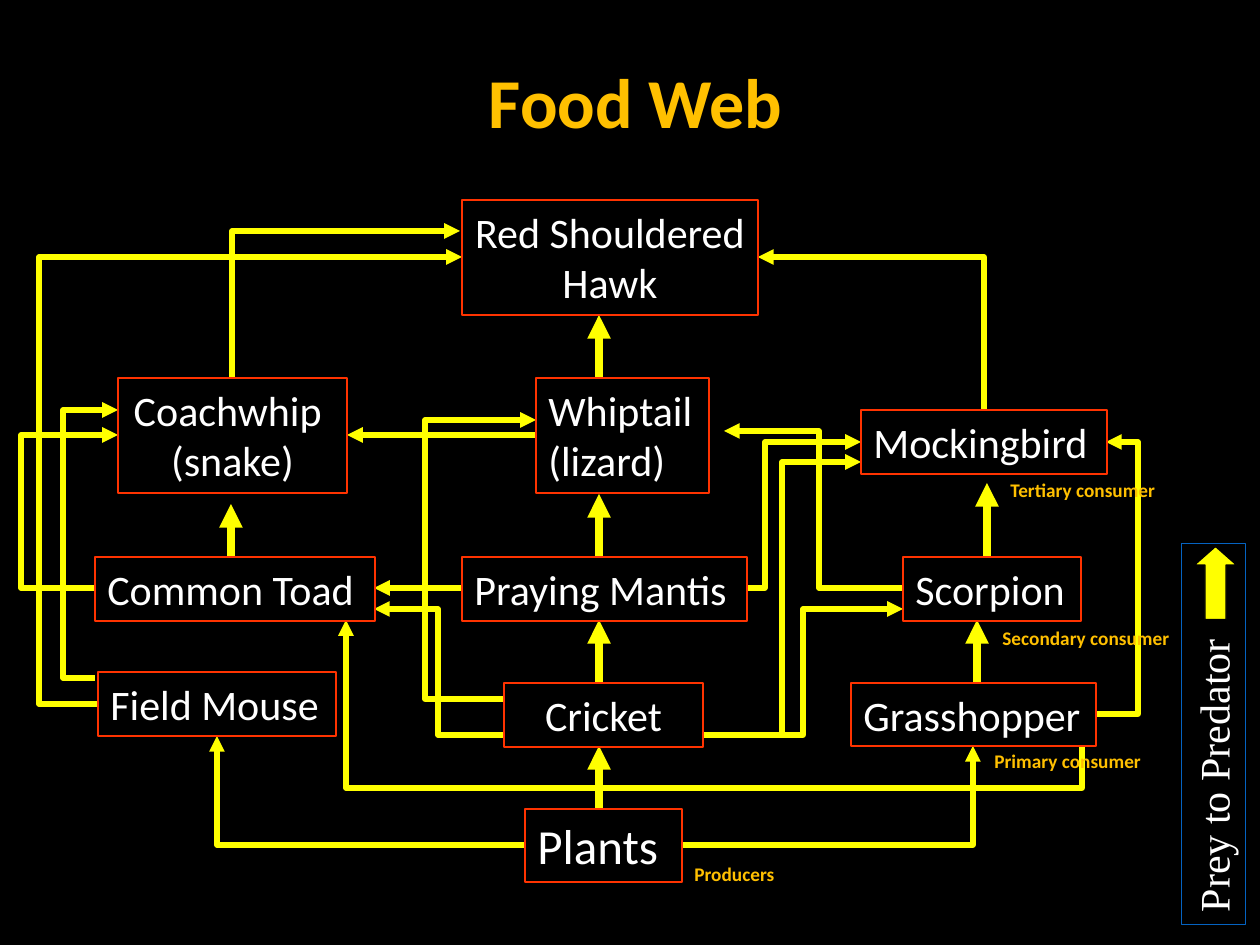
from lxml import etree
from pptx import Presentation
from pptx.dml.color import RGBColor
from pptx.enum.shapes import MSO_CONNECTOR, MSO_SHAPE
from pptx.enum.text import MSO_ANCHOR, MSO_AUTO_SIZE, PP_ALIGN
from pptx.oxml.ns import qn
from pptx.util import Emu, Pt

EMU_PER_PX = 914400 / 126

BLACK = RGBColor(0x00, 0x00, 0x00)
WHITE = RGBColor(0xFF, 0xFF, 0xFF)
YELLOW = RGBColor(0xFF, 0xFF, 0x00)
GOLD = RGBColor(0xFF, 0xC0, 0x00)
RED = RGBColor(0xFF, 0x33, 0x00)
BLUE = RGBColor(0x05, 0x63, 0xC1)

LEFT, CENTER = PP_ALIGN.LEFT, PP_ALIGN.CENTER
TOP, MIDDLE = MSO_ANCHOR.TOP, MSO_ANCHOR.MIDDLE
GROW = MSO_AUTO_SIZE.SHAPE_TO_FIT_TEXT
STRAIGHT, ELBOW = MSO_CONNECTOR.STRAIGHT, MSO_CONNECTOR.ELBOW
RECTANGLE, RIGHT_ARROW = MSO_SHAPE.RECTANGLE, MSO_SHAPE.RIGHT_ARROW

# Organisms: lines of text, (left, top, width, height), format
ORGANISMS = [
    (["Red Shouldered", "Hawk"], (462, 200, 296, 115), {"align": CENTER}),
    (["Coachwhip ", "(snake)"], (118, 378, 229, 115), {"align": CENTER}),
    (["Whiptail", "(lizard)"], (536, 378, 173, 115), {}),
    (["Mockingbird"], (861, 410, 246, 64), {}),
    (["Common Toad"], (95, 557, 280, 64), {}),
    (["Praying Mantis"], (462, 557, 285, 64), {}),
    (["Scorpion"], (903, 557, 178, 64), {}),
    (["Field Mouse"], (98, 672, 238, 64), {}),
    (["Cricket"], (504, 683, 199, 64), {"align": CENTER, "wrap": True}),
    (["Grasshopper"], (851, 683, 245, 63), {}),
    (["Plants"], (525, 809, 157, 73), {"size": 28, "wrap": True}),
]

TROPHIC_LABELS = [
    ("Producers", (682, 856, 106, 36)),
    ("Primary consumer", (982, 743, 172, 36)),
    ("Secondary consumer", (990, 620, 193, 36)),
    ("Tertiary consumer", (998, 472, 172, 36)),
]

# Upward arrows: x, start y, end y
UPWARD = [
    (231, 557, 504), (599, 809, 746), (599, 683, 620), (599, 557, 494),
    (599, 378, 315), (977, 683, 620), (987, 557, 483),
]

SIDEWAYS = [((536, 435), (347, 435)), ((462, 588), (374, 588))]

# Three-part routes: start, end, x of the vertical part
SIDE_ROUTES = [
    ((95, 678), (118, 410), 63),
    ((1095, 714), (1106, 442), 1138),
    ((95, 588), (118, 435), 21),
    ((903, 588), (724, 431), 819),
    ((703, 735), (903, 609), 803),
    ((746, 588), (861, 442), 765),
    ((504, 699), (536, 420), 425),
    ((703, 735), (861, 462), 782),
    ((504, 735), (374, 609), 438),
    ((98, 704), (462, 257), 39),
]

# One-corner routes: start, end, whether the first part is vertical
CORNER_ROUTES = [
    ((525, 845), (217, 736), False),
    ((682, 845), (973, 746), False),
    ((984, 410), (758, 257), True),
    ((232, 378), (460, 231), True),
]


def px(length):
    return Emu(round(length * EMU_PER_PX))


def write_text(shape, lines, size=24, color=WHITE, font="Calibri", bold=False,
               align=LEFT, anchor=TOP, wrap=False, grow=True, spacing=None):
    frame = shape.text_frame
    frame.word_wrap = wrap
    frame.vertical_anchor = anchor
    if grow:
        frame.auto_size = GROW
    for index, line in enumerate(lines):
        para = frame.add_paragraph() if index else frame.paragraphs[0]
        para.alignment = align
        if spacing:
            para.line_spacing = spacing
        span = para.add_run()
        span.text = line
        span.font.name = font
        span.font.size = Pt(size)
        span.font.bold = bold
        span.font.color.rgb = color


def add_box(page, bounds, fill, outline, kind=RECTANGLE):
    box = page.shapes.add_shape(kind, *map(px, bounds))
    box.shadow.inherit = False
    if fill is None:
        box.fill.background()
    else:
        box.fill.solid()
        box.fill.fore_color.rgb = fill
    box.line.color.rgb = outline
    box.line.width = Pt(0.75)
    return box


def add_arrow(page, start, end, width=3, kind=STRAIGHT):
    arrow = page.shapes.add_connector(kind, *map(px, (*start, *end)))
    arrow.line.color.rgb = YELLOW
    arrow.line.width = Pt(width)
    etree.SubElement(arrow.line._get_or_add_ln(), qn("a:tailEnd"), type="triangle")
    etree.SubElement(arrow._element.spPr, qn("a:effectLst"))
    return arrow


def add_route(page, start, end, via=None, vertical=False):
    """Bent arrow; via is where the middle part runs, None gives one corner."""
    (x1, y1), (x2, y2) = start, end
    first, last = (y1, y2) if vertical else (x1, x2)
    if vertical:
        # Lay the route out sideways about its centre, then turn it 90 degrees
        middle_x, middle_y = (x1 + x2) / 2, (y1 + y2) / 2
        half_x, half_y = (y2 - y1) / 2, (x1 - x2) / 2
        start = (middle_x - half_x, middle_y - half_y)
        end = (middle_x + half_x, middle_y + half_y)
    arrow = add_arrow(page, start, end, kind=ELBOW)
    properties = arrow._element.spPr
    if vertical:
        properties.find(qn("a:xfrm")).set("rot", "5400000")
    geometry = properties.find(qn("a:prstGeom"))
    if via is None:
        geometry.set("prst", "bentConnector2")
    else:
        share = round((via - first) / (last - first) * 100000)
        guides = geometry.find(qn("a:avLst"))
        etree.SubElement(guides, qn("a:gd"), name="adj1", fmla=f"val {share}")


def add_title(page, text):
    title = page.shapes.title
    title.left, title.top, title.width, title.height = map(px, (105, 32, 1061, 147))
    title.fill.solid()
    title.fill.fore_color.rgb = BLACK
    write_text(title, [text], size=40, color=GOLD, bold=True, align=CENTER,
               anchor=MIDDLE, wrap=True, grow=False, spacing=0.9)


def add_legend(page):
    box = add_box(page, (1023, 702, 381, 64), None, BLUE)
    box.rotation = 270
    write_text(box, ["Prey to Predator"], font="Times New Roman", wrap=True)
    arrow = add_box(page, (1179, 562, 73, 42), YELLOW, BLACK, kind=RIGHT_ARROW)
    arrow.rotation = 270
    arrow.adjustments[1] = 0.44


def main():
    deck = Presentation()
    deck.slide_width, deck.slide_height = px(1260), px(945)
    page = deck.slides.add_slide(deck.slide_layouts[0])
    page.background.fill.solid()
    page.background.fill.fore_color.rgb = BLACK
    subtitle = page.placeholders[1]._element
    subtitle.getparent().remove(subtitle)
    add_title(page, "Food Web")

    # Feeding arrows
    add_route(page, (1082, 746), (346, 620), via=788, vertical=True)
    for start, end, via in SIDE_ROUTES:
        add_route(page, start, end, via=via)
    for start, end, vertical in CORNER_ROUTES:
        add_route(page, start, end, vertical=vertical)
    for x, bottom, top in UPWARD:
        add_arrow(page, (x, bottom), (x, top), width=4.5)
    for start, end in SIDEWAYS:
        add_arrow(page, start, end)

    # Organisms, legend and trophic levels
    for lines, bounds, style in ORGANISMS:
        write_text(add_box(page, bounds, BLACK, RED), lines, **style)
    add_legend(page)
    for text, bounds in TROPHIC_LABELS:
        label = page.shapes.add_textbox(*map(px, bounds))
        write_text(label, [text], size=11, color=GOLD, bold=True)

    deck.save("out.pptx")


if __name__ == "__main__":
    main()
